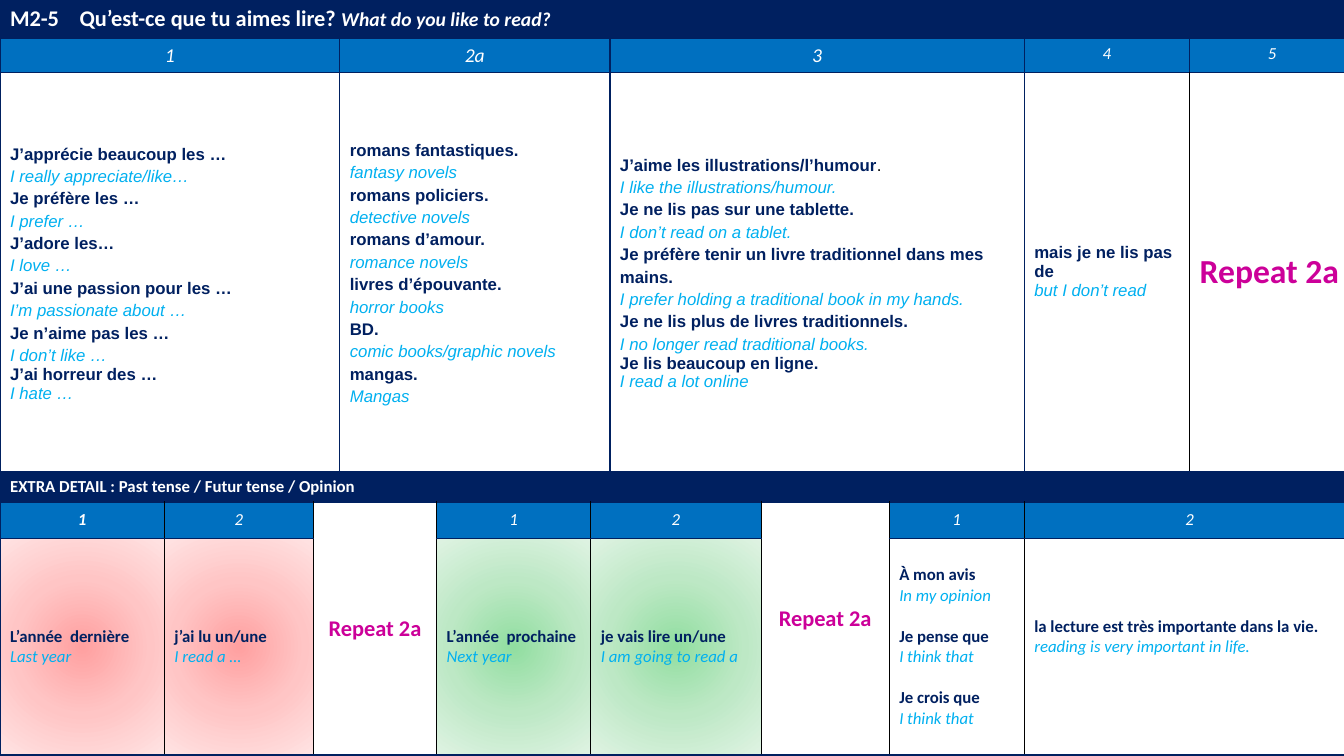
from dataclasses import dataclass
from typing import Optional, Union

from lxml.etree import SubElement
from pptx import Presentation
from pptx.dml.color import RGBColor
from pptx.enum.text import MSO_ANCHOR, PP_ALIGN
from pptx.oxml.ns import qn
from pptx.util import Inches, Pt

NAVY = RGBColor(0x00, 0x20, 0x60)
BLUE = RGBColor(0x00, 0x70, 0xC0)
SKY = RGBColor(0x00, 0xB0, 0xF0)
MAGENTA = RGBColor(0xCC, 0x00, 0x99)
WHITE = RGBColor(0xFF, 0xFF, 0xFF)
BLACK = RGBColor(0x00, 0x00, 0x00)
# Radial fills, from the centre outwards
RED_GLOW = (RGBColor(0xFF, 0xA0, 0xA0), RGBColor(0xFF, 0xC5, 0xC5), RGBColor(0xFF, 0xE3, 0xE3))
GREEN_GLOW = (RGBColor(0x91, 0xDE, 0xA0), RGBColor(0xBD, 0xE8, 0xC5), RGBColor(0xDF, 0xF3, 0xE3))

COLUMN_WIDTHS = (1.63, 1.48, 0.26, 0.96, 1.53, 0.19, 1.5, 1.27, 1.34, 1.39, 0.25, 1.64)
ROW_HEIGHTS = (0.36, 0.33, 3.96, 0.3, 0.36, 2.15)


@dataclass(frozen=True)
class Style:
    size: float = 12
    color: RGBColor = NAVY
    bold: bool = False
    italic: bool = False
    name: str = "Calibri"


@dataclass(frozen=True)
class Line:
    runs: tuple[tuple[str, Style], ...]
    align: PP_ALIGN = PP_ALIGN.LEFT
    spacing: Optional[float] = None
    before: float = 0
    tab: float = 0


@dataclass(frozen=True)
class Block:
    row: int
    column: int
    lines: list[Line]
    columns: int = 1
    rows: int = 1
    fill: Union[RGBColor, tuple[RGBColor, ...], None] = None
    bottom_margin: float = 0.05


def pairs(*phrases: tuple[str, str], name: str = "Calibri", spacing: Optional[float] = None,
          tight_last: bool = False, gap: float = 0) -> list[Line]:
    """French phrases in bold, each followed by its English meaning."""
    lines = []
    for index, (french, english) in enumerate(phrases):
        last = tight_last and index == len(phrases) - 1
        leading = None if last else spacing
        french_runs = [(french, Style(bold=True, name=name))]
        if french.endswith("l’humour."):
            french_runs = [(french[:-1], Style(bold=True, name=name)), (".", Style(color=BLACK, name=name))]
        lines.append(Line(tuple(french_runs), spacing=leading, before=gap if index else 0))
        lines.append(Line(((english, Style(color=SKY, italic=True, name=name)),), spacing=leading))
    return lines


def number(row: int, column: int, text: str, columns: int = 1, size: float = 12,
           bold: bool = False) -> Block:
    style = Style(size, WHITE, bold, True)
    return Block(row, column, [Line(((text, style),), PP_ALIGN.CENTER)], columns, fill=BLUE)


def repeat(size: float, align: PP_ALIGN = PP_ALIGN.CENTER) -> list[Line]:
    return [Line((("Repeat 2a", Style(size, MAGENTA, True)),), align)]


BLOCKS = [
    # Title
    Block(0, 0, [Line((("M2-5\tQu’est-ce que tu aimes lire? ", Style(16, WHITE, True)),
                       ("What do you like to read?", Style(14, WHITE, True, True))), tab=0.69)],
          columns=10, fill=NAVY),
    Block(0, 10, [Line((("", Style()),))], columns=2, fill=NAVY),
    # Sentence builder
    number(1, 0, "1", 3, 14),
    number(1, 3, "2a", 3, 14),
    number(1, 6, "3", 3, 14),
    number(1, 9, "4", 2),
    number(1, 11, "5"),
    Block(2, 0, pairs(("J’apprécie beaucoup les …", "I really appreciate/like…"),
                      ("Je préfère les …", "I prefer …"),
                      ("J’adore les…", "I love …"),
                      ("J’ai une passion pour les …", "I’m passionate about …"),
                      ("Je n’aime pas les …", "I don’t like …"),
                      ("J’ai horreur des …", "I hate …"),
                      name="Arial", spacing=16, tight_last=True), columns=3),
    Block(2, 3, pairs(("romans fantastiques.", "fantasy novels"),
                      ("romans policiers.", "detective novels"),
                      ("romans d’amour.", "romance novels"),
                      ("livres d’épouvante.", "horror books"),
                      ("BD.", "comic books/graphic novels"),
                      ("mangas.", "Mangas"), name="Arial", spacing=16), columns=3),
    Block(2, 6, pairs(("J’aime les illustrations/l’humour.", "I like the illustrations/humour."),
                      ("Je ne lis pas sur une tablette.", "I don’t read on a tablet."),
                      ("Je préfère tenir un livre traditionnel dans mes mains.",
                       "I prefer holding a traditional book in my hands."),
                      ("Je ne lis plus de livres traditionnels.", "I no longer read traditional books."),
                      ("Je lis beaucoup en ligne.", "I read a lot online"),
                      name="Arial", spacing=16, tight_last=True), columns=3),
    Block(2, 9, pairs(("mais je ne lis pas de", "but I don’t read"), name="Arial"), columns=2),
    Block(2, 11, repeat(24, PP_ALIGN.LEFT)),
    # Extra detail
    Block(3, 0, [Line((("EXTRA DETAIL : Past tense / Futur tense / Opinion",
                        Style(color=WHITE, bold=True)),))], columns=12, fill=NAVY),
    number(4, 0, "1", bold=True),
    number(4, 1, "2"),
    Block(4, 2, repeat(16), columns=2, rows=2, fill=WHITE),
    number(4, 4, "1"),
    number(4, 5, "2", 2),
    Block(4, 7, repeat(16), rows=2, fill=WHITE, bottom_margin=0.25),
    number(4, 8, "1"),
    number(4, 9, "2", 3),
    Block(5, 0, pairs(("L’année  dernière", "Last year")), fill=RED_GLOW),
    Block(5, 1, pairs(("j’ai lu un/une", "I read a …")), fill=RED_GLOW),
    Block(5, 4, pairs(("L’année  prochaine", "Next year")), fill=GREEN_GLOW),
    Block(5, 5, pairs(("je vais lire un/une", "I am going to read a")), columns=2, fill=GREEN_GLOW),
    Block(5, 8, pairs(("À mon avis", "In my opinion"), ("Je pense que", "I think that"),
                      ("Je crois que", "I think that"), gap=14.65)),
    Block(5, 9, pairs(("la lecture est très importante dans la vie.",
                       "reading is very important in life.")), columns=3, bottom_margin=0.25),
]


def set_font(font, style: Style) -> None:
    font.name, font.size = style.name, Pt(style.size)
    font.bold, font.italic = style.bold, style.italic
    font.color.rgb = style.color


def write_line(paragraph, line: Line) -> None:
    paragraph.alignment = line.align
    if line.spacing:
        paragraph.line_spacing = Pt(line.spacing)
    if line.before:
        paragraph.space_before = Pt(line.before)
    if line.tab:
        tabs = SubElement(paragraph._p.get_or_add_pPr(), qn("a:tabLst"))
        SubElement(tabs, qn("a:tab"), pos=str(Inches(line.tab)), algn="l")
    for text, style in line.runs:
        run = paragraph.add_run()
        run.text = text
        if len(line.runs) > 1 or not text:
            set_font(run.font, style)
    if len(line.runs) == 1:
        set_font(paragraph.font, line.runs[0][1])


def format_cell(cell, block: Block) -> None:
    """Borders come before the fill in the cell properties."""
    properties = cell._tc.get_or_add_tcPr()
    upper = block.row < 2
    left = NAVY if upper or block.column == 0 or (block.row == 2 and block.column < 11) else BLACK
    right = NAVY if upper or (block.row == 2 and block.column < 9) else BLACK
    for side, color in (("L", left), ("R", right), ("T", NAVY), ("B", NAVY)):
        border = SubElement(properties, qn(f"a:ln{side}"), w=str(Pt(1)))
        SubElement(SubElement(border, qn("a:solidFill")), qn("a:srgbClr"), val=str(color))
    if block.fill is None:
        cell.fill.background()
    elif isinstance(block.fill, RGBColor):
        cell.fill.solid()
        cell.fill.fore_color.rgb = block.fill
    else:
        gradient = SubElement(properties, qn("a:gradFill"))
        stops = SubElement(gradient, qn("a:gsLst"))
        for index, color in enumerate(block.fill):
            stop = SubElement(stops, qn("a:gs"), pos=str(index * 50000))
            SubElement(stop, qn("a:srgbClr"), val=str(color))
        center = SubElement(gradient, qn("a:path"), {"path": "circle"})
        SubElement(center, qn("a:fillToRect"), l="50000", t="50000", r="50000", b="50000")


def draw_block(table, block: Block) -> None:
    last_row, last_column = block.row + block.rows - 1, block.column + block.columns - 1
    for row in range(block.row, last_row + 1):
        for column in range(block.column, last_column + 1):
            format_cell(table.cell(row, column), block)
    cell = table.cell(block.row, block.column)
    if block.rows * block.columns > 1:
        cell.merge(table.cell(last_row, last_column))
    cell.vertical_anchor = MSO_ANCHOR.TOP if block.row < 2 else MSO_ANCHOR.MIDDLE
    cell.margin_bottom = Inches(block.bottom_margin)
    frame = cell.text_frame
    for index, line in enumerate(block.lines):
        write_line(frame.add_paragraph() if index else frame.paragraphs[0], line)


def main() -> None:
    presentation = Presentation()
    presentation.slide_width, presentation.slide_height = Inches(13.33), Inches(7.5)
    slide = presentation.slides.add_slide(presentation.slide_layouts[6])
    table = slide.shapes.add_table(len(ROW_HEIGHTS), len(COLUMN_WIDTHS), 0, 0,
                                   Inches(sum(COLUMN_WIDTHS)), Inches(sum(ROW_HEIGHTS))).table
    table.first_row = table.horz_banding = False
    for column, width in zip(table.columns, COLUMN_WIDTHS):
        column.width = Inches(width)
    for row, height in zip(table.rows, ROW_HEIGHTS):
        row.height = Inches(height)
    for block in BLOCKS:
        draw_block(table, block)
    presentation.save("out.pptx")


if __name__ == "__main__":
    main()
